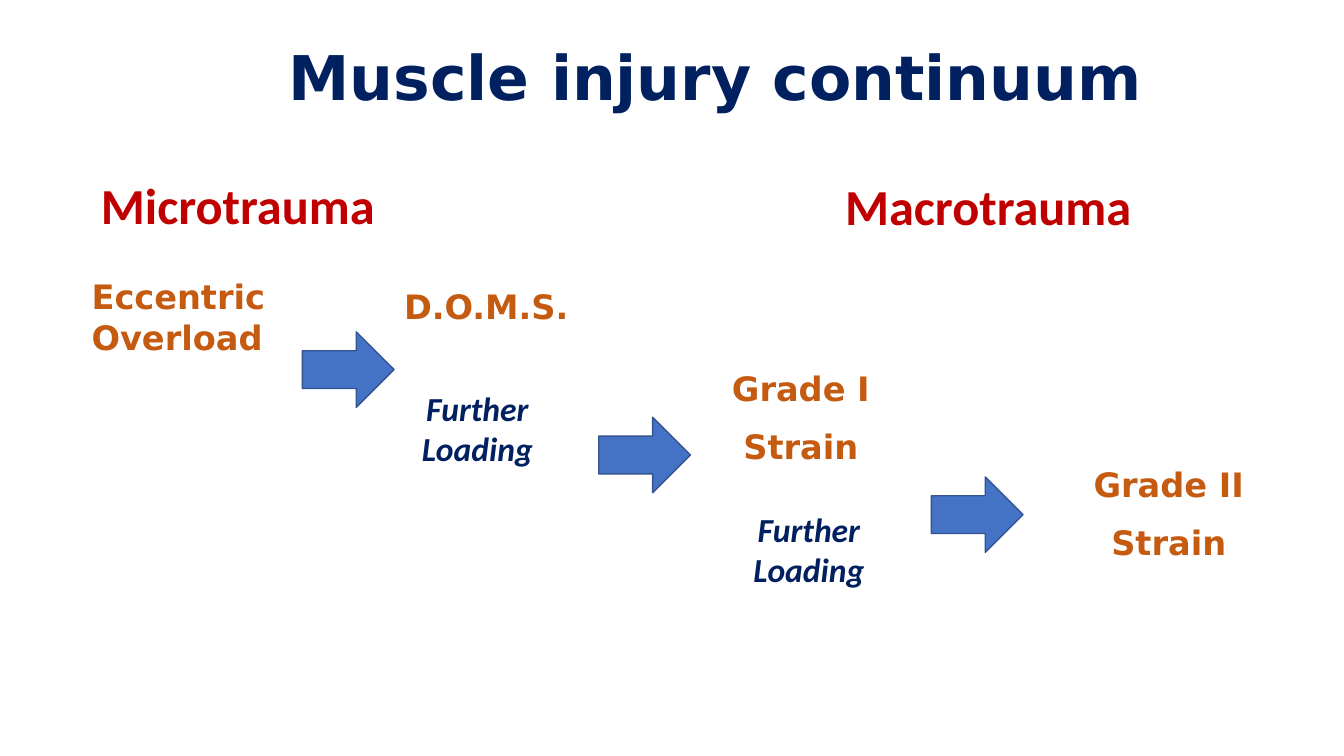
import pptx
import pptx.dml.color
import pptx.enum.shapes
import pptx.enum.text
import pptx.util

Pt = pptx.util.Pt
RGBColor = pptx.dml.color.RGBColor
PP_ALIGN = pptx.enum.text.PP_ALIGN

NAVY = RGBColor(0x00, 0x20, 0x60)
RED = RGBColor(0xC0, 0x00, 0x00)
ORANGE = RGBColor(0xC5, 0x5A, 0x11)
BLUE = RGBColor(0x44, 0x72, 0xC4)
BLUE_EDGE = RGBColor(0x32, 0x54, 0x91)


class ContinuumSlide:
    heading_font = "DejaVu Sans"
    body_font = "Calibri"
    stage_size = 24
    paragraph_gap = 13

    def __init__(self, presentation):
        self.slide = presentation.slides.add_slide(presentation.slide_layouts[5])

    def set_text(self, shape, lines, font, size, color, italic=False,
                 align=PP_ALIGN.LEFT, side_margin=7.2):
        frame = shape.text_frame
        frame.word_wrap = True
        frame.auto_size = pptx.enum.text.MSO_AUTO_SIZE.NONE
        frame.vertical_anchor = pptx.enum.text.MSO_ANCHOR.TOP
        frame.margin_left = frame.margin_right = Pt(side_margin)
        for index, line in enumerate(lines):
            paragraph = frame.add_paragraph() if index else frame.paragraphs[0]
            paragraph.alignment = align
            paragraph.line_spacing = 1.0
            paragraph.space_before = Pt(self.paragraph_gap if index else 0)
            run = paragraph.add_run()
            run.text = line
            run.font.name = font
            run.font.size = Pt(size)
            run.font.bold = True
            run.font.italic = italic
            run.font.color.rgb = color

    def text_box(self, left, top, width, height):
        return self.slide.shapes.add_textbox(Pt(left), Pt(top), Pt(width), Pt(height))

    def title(self, text):
        shape = self.slide.shapes.title
        shape.left, shape.top = Pt(101.5), Pt(24.5)
        shape.width, shape.height = Pt(819.4), Pt(60.5)
        self.set_text(shape, [text], self.heading_font, 44, NAVY, align=PP_ALIGN.CENTER)

    def phase(self, text, left, top):
        shape = self.text_box(left, top, 265.7, 51)
        self.set_text(shape, [text], self.body_font, 36, RED)

    def stage(self, lines, left, top, height, align=PP_ALIGN.LEFT):
        shape = self.text_box(left, top, 157.7, height)
        self.set_text(shape, lines, self.heading_font, self.stage_size, ORANGE, align=align)

    def loading(self, left, top):
        shape = self.text_box(left, top, 172, 65.5)
        self.set_text(shape, ["Further Loading"], self.body_font, self.stage_size, NAVY,
                      italic=True, align=PP_ALIGN.CENTER, side_margin=12)

    def arrow(self, left, top):
        shape = self.slide.shapes.add_shape(
            pptx.enum.shapes.MSO_SHAPE.RIGHT_ARROW, Pt(left), Pt(top), Pt(65.5), Pt(54))
        shape.shadow.inherit = False
        shape.fill.solid()
        shape.fill.fore_color.rgb = BLUE
        shape.line.color.rgb = BLUE_EDGE
        shape.line.width = Pt(1)


def main():
    presentation = pptx.Presentation()
    presentation.slide_width = Pt(960)
    presentation.slide_height = Pt(540)
    continuum = ContinuumSlide(presentation)
    continuum.title("Muscle injury continuum")

    continuum.phase("Microtrauma", 65, 121)
    continuum.phase("Macrotrauma", 596.5, 121.5)

    continuum.stage(["Eccentric Overload"], 58.3, 193.7, 65.5)
    continuum.stage(["D.O.M.S."], 281.5, 201, 36)
    continuum.stage(["Grade I", "Strain"], 493.2, 259.2, 80, PP_ALIGN.CENTER)
    continuum.stage(["Grade II", "Strain"], 756, 327.6, 80, PP_ALIGN.CENTER)

    for left, top in [(255, 273.6), (491.8, 360)]:
        continuum.loading(left, top)

    for left, top in [(216, 237), (427.7, 298), (665.3, 340.6)]:
        continuum.arrow(left, top)

    presentation.save("out.pptx")


if __name__ == "__main__":
    main()
